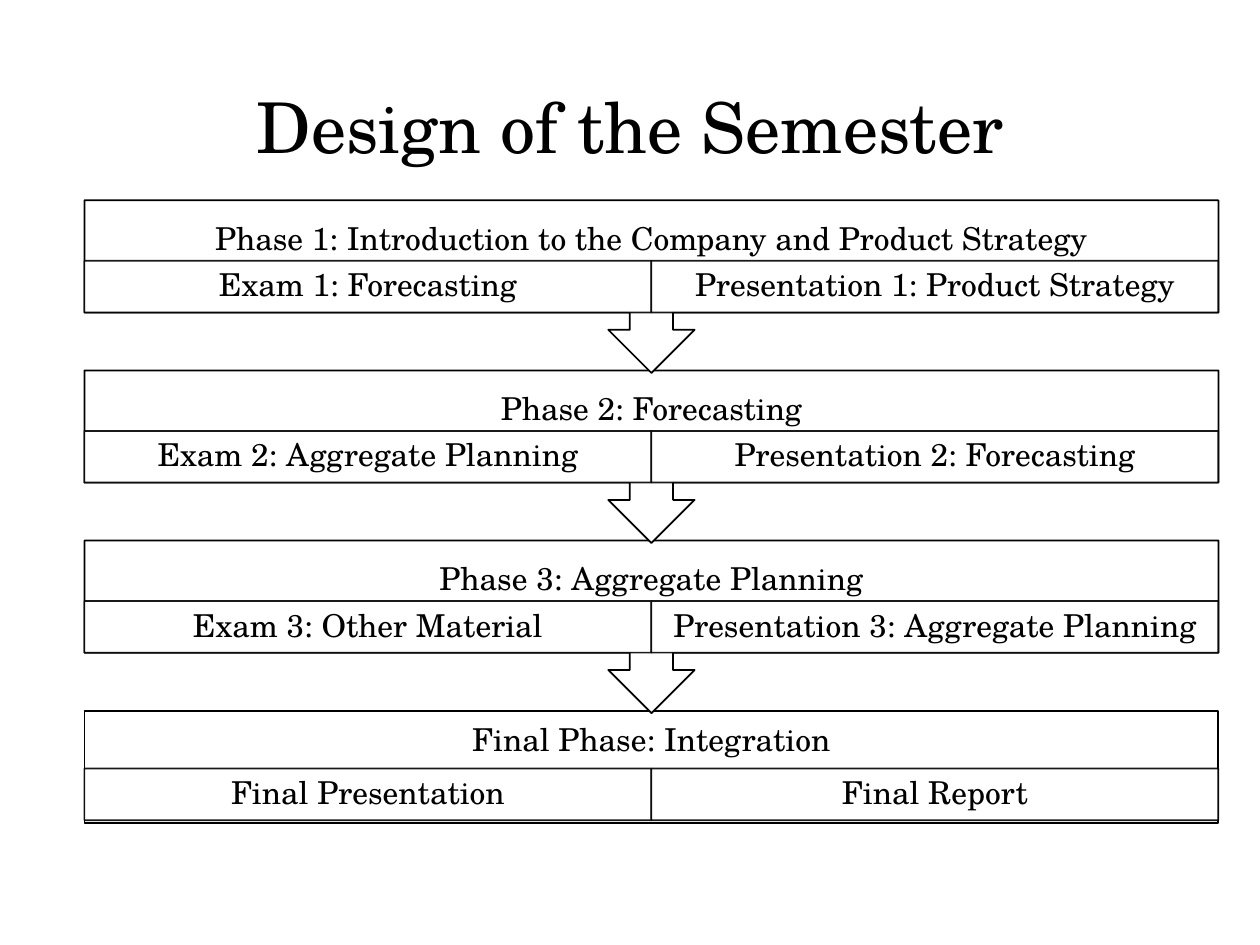
from lxml import etree
from pptx import Presentation
from pptx import util as u
from pptx.dml.color import RGBColor
from pptx.enum import shapes, text
from pptx.oxml.ns import qn

FONT = "TeX Gyre Schola"
BLACK, WHITE = "000000", "FFFFFF"

LEFT, TOP, WIDTH = 0.67, 1.59, 9
PITCH = 1.35
BOX_HEIGHT, CALLOUT_HEIGHT = 0.89, 1.37
CELL_HEIGHT = 0.41
CELL_WIDTH = WIDTH / 2

PHASES = [
    ("Phase 1: Introduction to the Company and Product Strategy",
     ["Exam 1: Forecasting", "Presentation 1: Product Strategy"]),
    ("Phase 2: Forecasting",
     ["Exam 2: Aggregate Planning", "Presentation 2: Forecasting"]),
    ("Phase 3: Aggregate Planning",
     ["Exam 3: Other Material", "Presentation 3: Aggregate Planning"]),
    ("Final Phase: Integration", ["Final Presentation", "Final Report"]),
]


def color(hex_string):
    return RGBColor.from_string(hex_string)


def inches(*lengths):
    return [u.Inches(length) for length in lengths]


def write(shape, words, size, margin_x, margin_y):
    """Put one centred paragraph in the middle of a shape."""
    frame = shape.text_frame
    frame.word_wrap = True
    frame.vertical_anchor = text.MSO_ANCHOR.MIDDLE
    frame.margin_left = frame.margin_right = u.Inches(margin_x)
    frame.margin_top = frame.margin_bottom = u.Inches(margin_y)
    paragraph = frame.paragraphs[0]
    paragraph.text = words
    paragraph.alignment = text.PP_ALIGN.CENTER
    paragraph.font.name = FONT
    paragraph.font.size = u.Pt(size)
    paragraph.font.color.rgb = color(BLACK)
    return paragraph


def write_label(shape, words, margin_y):
    paragraph = write(shape, words, 18, 0.14, margin_y)
    paragraph.line_spacing = 0.9
    paragraph.space_after = u.Pt(6.3)


def add_outlined(slide, kind, left, top, width, height):
    shape = slide.shapes.add_shape(kind, *inches(left, top, width, height))
    shape.shadow.inherit = False
    shape.fill.solid()
    shape.fill.fore_color.rgb = color(WHITE)
    shape.line.color.rgb = color(BLACK)
    shape.line.width = u.Pt(1)
    return shape


def set_opacity(shape, percent):
    """Apply one opacity to both fill and line."""
    for rgb in shape.element.spPr.iter(qn("a:srgbClr")):
        etree.SubElement(rgb, qn("a:alpha"), val=str(percent * 1000))


def add_heading(slide, words, top, height):
    box = slide.shapes.add_textbox(*inches(LEFT, top, WIDTH, height))
    write_label(box, words, 0.14)


def add_cells(slide, labels, top):
    for column, label in enumerate(labels):
        cell = add_outlined(slide, shapes.MSO_SHAPE.RECTANGLE,
                            LEFT + column * CELL_WIDTH, top, CELL_WIDTH, CELL_HEIGHT)
        set_opacity(cell, 90)
        write_label(cell, label, 0.03)


def add_phase(slide, heading, labels, top):
    """Box with a downward arrow to the next phase."""
    callout = add_outlined(slide, shapes.MSO_SHAPE.UP_ARROW_CALLOUT,
                           LEFT, top, WIDTH, CALLOUT_HEIGHT)
    callout.rotation = 180
    add_heading(slide, heading, top + 0.16, 0.31)
    add_cells(slide, labels, top + 0.48)


def add_final_phase(slide, heading, labels, top):
    add_outlined(slide, shapes.MSO_SHAPE.RECTANGLE, LEFT, top, WIDTH, BOX_HEIGHT)
    add_heading(slide, heading, top, 0.48)
    add_cells(slide, labels, top + 0.46)


def add_title(slide, words):
    title = slide.shapes.title
    title.left, title.top, title.width, title.height = inches(0.5, 0.37, 9, 1.25)
    write(title, words, 40, 0.1, 0.05)


def main():
    presentation = Presentation()
    presentation.slide_width, presentation.slide_height = inches(10, 7.5)
    slide = presentation.slides.add_slide(presentation.slide_layouts[5])
    add_title(slide, "Design of the Semester")

    # Last phase first, so that each arrow tip lies over the box below it.
    last = len(PHASES) - 1
    for row in range(last, -1, -1):
        add = add_final_phase if row == last else add_phase
        add(slide, *PHASES[row], TOP + row * PITCH)

    presentation.save("out.pptx")


if __name__ == "__main__":
    main()
